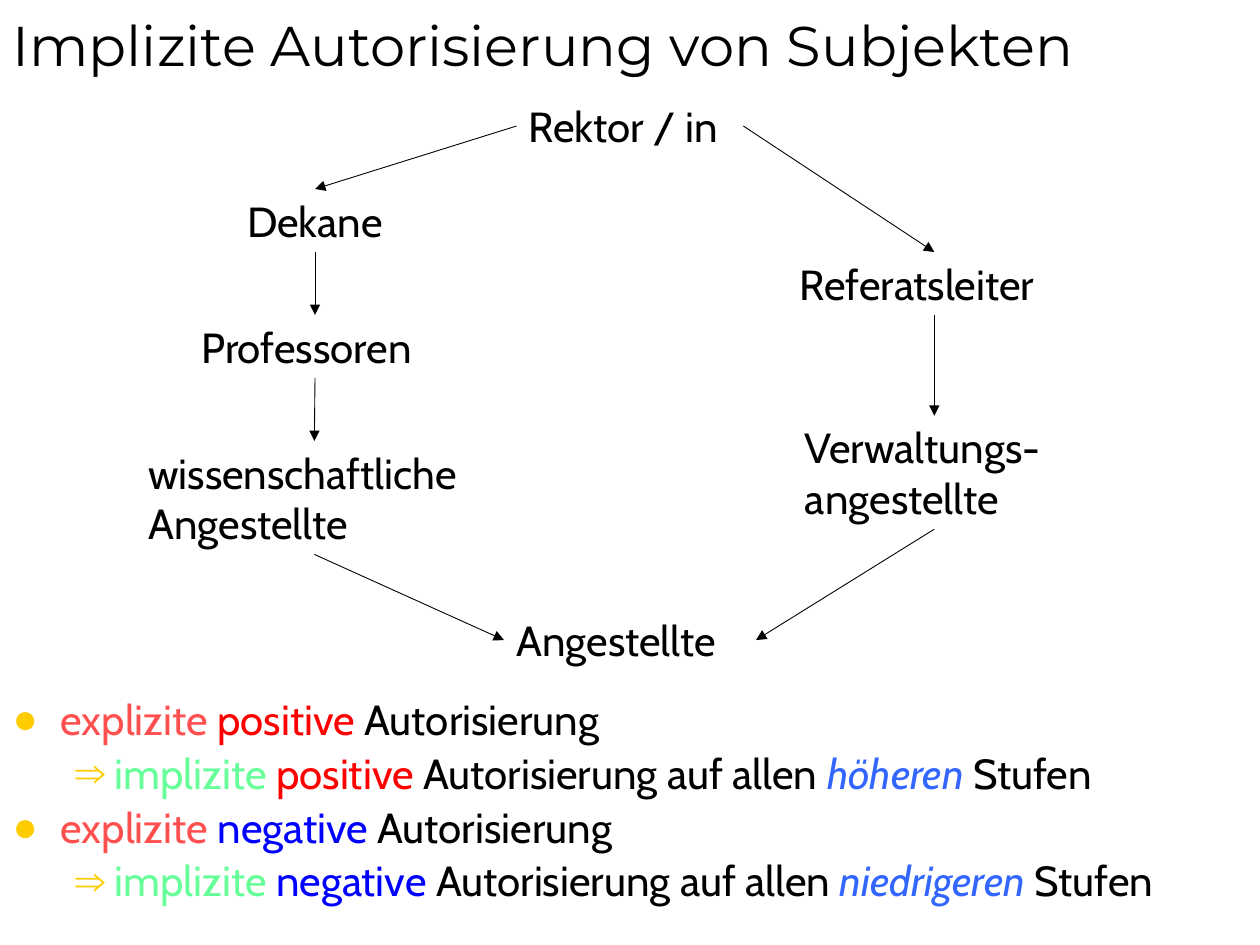
from lxml.etree import SubElement
from pptx import Presentation
from pptx.dml.color import RGBColor
from pptx.enum.shapes import MSO_CONNECTOR
from pptx.enum.text import MSO_ANCHOR, MSO_AUTO_SIZE, PP_ALIGN
from pptx.oxml.ns import qn
from pptx.util import Inches, Pt

BLACK = RGBColor(0x00, 0x00, 0x00)
YELLOW = RGBColor(0xFF, 0xCC, 0x00)
CORAL = RGBColor(0xFF, 0x50, 0x50)
RED = RGBColor(0xFF, 0x00, 0x00)
BLUE = RGBColor(0x00, 0x00, 0xFF)
MINT = RGBColor(0x66, 0xFF, 0x99)
SKY = RGBColor(0x33, 0x66, 0xFF)

TOP, LEFT, BOTTOM, RIGHT = range(4)

# name: (text, left, top, width, height, alignment)
ROLES = {
    "rector": ("Rektor / in", 4.1, 0.75, 1.8, 0.5, PP_ALIGN.LEFT),
    "staff": ("Angestellte", 4, 4.83, 2, 0.5, PP_ALIGN.LEFT),
    "head": ("Referatsleiter", 6.25, 2, 2.33, 0.5, PP_ALIGN.LEFT),
    "clerks": ("Verwaltungs-angestellte", 6.29, 3.3, 2.25, 0.9, PP_ALIGN.LEFT),
    "deans": ("Dekane", 1.75, 1.5, 1.5, 0.5, PP_ALIGN.CENTER),
    "professors": ("Professoren", 1.5, 2.5, 2, 0.5, PP_ALIGN.LEFT),
    "scientists": ("wissenschaftliche\vAngestellte", 1.08, 3.5, 2.83, 0.9, PP_ALIGN.LEFT),
}

ARROWS = [
    ("rector", LEFT, "deans", TOP),
    ("deans", BOTTOM, "professors", TOP),
    ("professors", BOTTOM, "scientists", TOP),
    ("scientists", BOTTOM, "staff", LEFT),
    ("rector", RIGHT, "head", TOP),
    ("head", BOTTOM, "clerks", TOP),
    ("clerks", BOTTOM, "staff", RIGHT),
]

RULES = [("positive", RED, "höheren"), ("negative", BLUE, "niedrigeren")]


class SlideBuilder:
    title_font = "Montserrat"
    body_font = "Cabin"
    body_size = Pt(24)

    def __init__(self, slide):
        self.slide = slide

    def place(self, shape, left, top, width, height):
        shape.left, shape.top = Inches(left), Inches(top)
        shape.width, shape.height = Inches(width), Inches(height)

    def style(self, paragraph, name, size):
        paragraph.font.name = name
        paragraph.font.size = size
        paragraph.font.color.rgb = BLACK

    def title(self, text, *box):
        shape = self.slide.shapes.title
        self.place(shape, *box)
        frame = shape.text_frame
        frame.text = text
        frame.auto_size = MSO_AUTO_SIZE.NONE
        frame.vertical_anchor = MSO_ANCHOR.BOTTOM
        paragraph = frame.paragraphs[0]
        paragraph.alignment = PP_ALIGN.LEFT
        self.style(paragraph, self.title_font, Pt(32))

    def label(self, text, left, top, width, height, alignment):
        shape = self.slide.shapes.add_textbox(
            Inches(left), Inches(top), Inches(width), Inches(height))
        frame = shape.text_frame
        frame.word_wrap = True
        frame.auto_size = MSO_AUTO_SIZE.SHAPE_TO_FIT_TEXT
        paragraph = frame.paragraphs[0]
        paragraph.text = text
        paragraph.alignment = alignment
        self.style(paragraph, self.body_font, self.body_size)
        return shape

    def arrow(self, start, start_side, end, end_side):
        connector = self.slide.shapes.add_connector(MSO_CONNECTOR.STRAIGHT, 0, 0, 0, 0)
        connector.begin_connect(start, start_side)
        connector.end_connect(end, end_side)
        connector.line.color.rgb = BLACK
        connector.line.width = Pt(0.5)
        SubElement(connector.line._get_or_add_ln(), qn("a:tailEnd"), type="triangle")
        SubElement(connector._element.spPr, qn("a:effectLst"))

    def bullet(self, paragraph, symbol, margin, hanging):
        properties = paragraph._p.get_or_add_pPr()
        properties.set("marL", str(Inches(margin)))
        properties.set("indent", str(-Inches(hanging)))
        color = SubElement(properties, qn("a:buClr"))
        SubElement(color, qn("a:srgbClr"), val=str(YELLOW))
        SubElement(properties, qn("a:buChar"), char=symbol)

    def bullet_list(self, items, *box):
        """Fill the body with (level, runs) items; a run is (text, colour, italic)."""
        shape = self.slide.placeholders[1]
        self.place(shape, *box)
        frame = shape.text_frame
        frame.auto_size = MSO_AUTO_SIZE.NONE
        for index, (level, runs) in enumerate(items):
            paragraph = frame.add_paragraph() if index else frame.paragraphs[0]
            paragraph.level = level
            paragraph.line_spacing = 0.9
            paragraph.space_before = Pt(4.8)
            self.bullet(paragraph, *(("⇒", 0.81, 0.31) if level else ("●", 0.38, 0.38)))
            self.style(paragraph, self.body_font, self.body_size)
            for text, color, italic in runs:
                run = paragraph.add_run()
                run.text = text
                run.font.color.rgb = color
                if italic:
                    run.font.italic = True


def rule_items(kind, color, direction):
    """Return the explicit statement and the implicit one that follows from it."""
    return [
        (0, [("explizite ", CORAL, False), (kind, color, False),
             (" Autorisierung", BLACK, False)]),
        (1, [("implizite ", MINT, False), (kind, color, False),
             (" Autorisierung auf allen ", BLACK, False),
             (direction, SKY, True), (" Stufen", BLACK, False)]),
    ]


def main():
    presentation = Presentation()
    presentation.slide_width = Inches(10)
    presentation.slide_height = Inches(7.5)
    builder = SlideBuilder(presentation.slides.add_slide(presentation.slide_layouts[1]))

    builder.title("Implizite Autorisierung von Subjekten", 0, 0, 10, 0.67)
    items = [item for rule in RULES for item in rule_items(*rule)]
    builder.bullet_list(items, 0, 5.5, 10, 2)

    labels = {name: builder.label(*role) for name, role in ROLES.items()}
    for start, start_side, end, end_side in ARROWS:
        builder.arrow(labels[start], start_side, labels[end], end_side)

    presentation.save("out.pptx")


if __name__ == "__main__":
    main()
